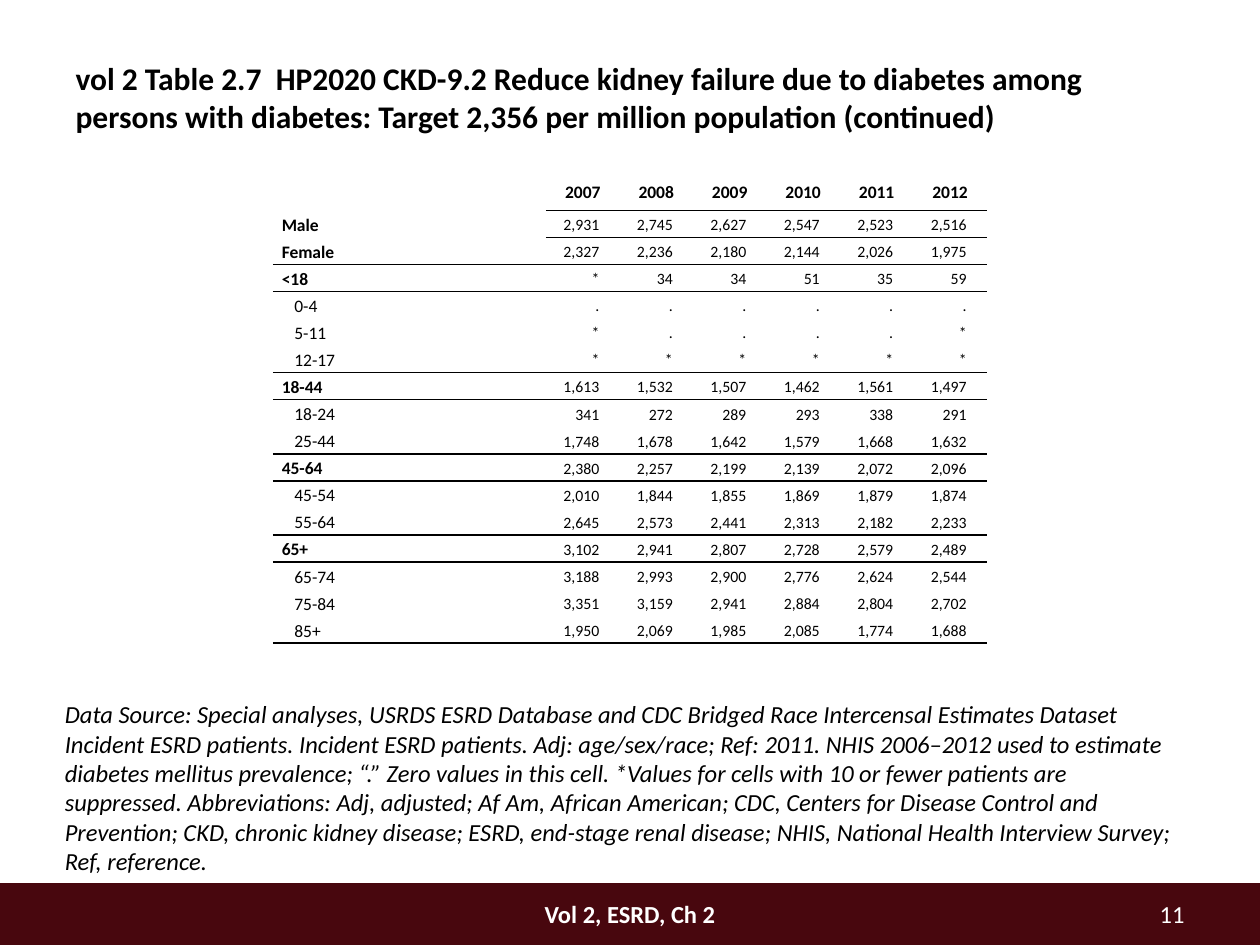
from lxml.etree import SubElement
from pptx import Presentation
from pptx.dml.color import RGBColor
from pptx.enum.shapes import MSO_SHAPE
from pptx.enum.text import MSO_ANCHOR, MSO_AUTO_SIZE, PP_ALIGN
from pptx.oxml.ns import qn
from pptx.util import Inches, Pt

COLS, ROWS = 120, 90
UNIT = Inches(10) / COLS
BLACK = RGBColor(0x00, 0x00, 0x00)
WHITE = RGBColor(0xFF, 0xFF, 0xFF)
MAROON = RGBColor(0x48, 0x07, 0x0E)
FONT = "Calibri"
PLAIN_STYLE = "{2D5ABB26-0587-4C30-8999-92F81FD0307C}"

TITLE = (
    "vol 2 Table 2.7  HP2020 CKD-9.2 Reduce kidney failure due to diabetes among "
    "persons with diabetes: Target 2,356 per million population (continued)"
)
SOURCE = (
    "Data Source: Special analyses, USRDS ESRD Database and CDC Bridged Race "
    "Intercensal Estimates Dataset Incident ESRD patients. Incident ESRD patients. "
    "Adj: age/sex/race; Ref: 2011. NHIS 2006–2012 used to estimate diabetes mellitus "
    "prevalence; “.” Zero values in this cell. *Values for cells with 10 or fewer "
    "patients are suppressed. Abbreviations: Adj, adjusted; Af Am, African American; "
    "CDC, Centers for Disease Control and Prevention; CKD, chronic kidney disease; "
    "ESRD, end-stage renal disease; NHIS, National Health Interview Survey; "
    "Ref, reference."
)
YEARS = ["2007", "2008", "2009", "2010", "2011", "2012"]
GROUPS = [
    ["Male 2,931 2,745 2,627 2,547 2,523 2,516",
     "Female 2,327 2,236 2,180 2,144 2,026 1,975"],
    ["<18 * 34 34 51 35 59",
     "0-4 . . . . . .",
     "5-11 * . . . . *",
     "12-17 * * * * * *"],
    ["18-44 1,613 1,532 1,507 1,462 1,561 1,497",
     "18-24 341 272 289 293 338 291",
     "25-44 1,748 1,678 1,642 1,579 1,668 1,632"],
    ["45-64 2,380 2,257 2,199 2,139 2,072 2,096",
     "45-54 2,010 1,844 1,855 1,869 1,879 1,874",
     "55-64 2,645 2,573 2,441 2,313 2,182 2,233"],
    ["65+ 3,102 2,941 2,807 2,728 2,579 2,489",
     "65-74 3,188 2,993 2,900 2,776 2,624 2,544",
     "75-84 3,351 3,159 2,941 2,884 2,804 2,702",
     "85+ 1,950 2,069 1,985 2,085 1,774 1,688"],
]
UNINDENTED = {"Male", "Female"} | {group[0].split()[0] for group in GROUPS}


def grid(*lengths):
    return [round(n * UNIT) for n in lengths]


def write(tf, text, size, color=BLACK, align=PP_ALIGN.LEFT, **font):
    p = tf.paragraphs[0]
    p.alignment = align
    p.space_before = Pt(0)
    r = p.add_run()
    r.text = text
    r.font.color.rgb = color
    for name, value in {"name": FONT, "size": Pt(size), **font}.items():
        setattr(r.font, name, value)
    return p


def set_frame(tf):
    frame = {"word_wrap": True, "auto_size": MSO_AUTO_SIZE.NONE,
             "vertical_anchor": MSO_ANCHOR.TOP}
    for name, value in frame.items():
        setattr(tf, name, value)


def add_title(s, box):
    sp = s.shapes.title
    for name, value in zip(("left", "top", "width", "height"), grid(*box)):
        setattr(sp, name, value)
    set_frame(sp.text_frame)
    write(sp.text_frame, TITLE, 18, bold=True)


def add_text(s, box, text, size, **style):
    tf = s.shapes.add_textbox(*grid(*box)).text_frame
    set_frame(tf)
    write(tf, text, size, **style)


def add_footer(s, box):
    left, top, width, height = box
    sp = s.shapes.add_shape(MSO_SHAPE.RECTANGLE, *grid(*box))
    sp.shadow.inherit = False
    sp.fill.solid()
    sp.fill.fore_color.rgb = MAROON
    sp.line.fill.background()
    text_top, text_height = top + 0.9, 3.6
    add_text(s, (left + width - 18, text_top, 12, text_height), "11", 14,
             color=WHITE, align=PP_ALIGN.RIGHT)
    add_text(s, (left + width / 2 - 13, text_top, 26, text_height),
             "Vol 2, ESRD, Ch 2", 14, color=WHITE, align=PP_ALIGN.CENTER, bold=True)


def add_border(cell, side):
    ln = SubElement(cell._tc.get_or_add_tcPr(), qn(f"a:ln{side}"), w=str(Pt(1)))
    fill = SubElement(ln, qn("a:solidFill"))
    SubElement(fill, qn("a:srgbClr"), val=str(BLACK))


def fill_cell(cell, text, row, col):
    insets = (0, 0.16) if row and col else (0.07, 0.07)
    margins = {"margin_left": Inches(insets[0]), "margin_right": Inches(insets[1]),
               "margin_top": 0, "margin_bottom": 0,
               "vertical_anchor": MSO_ANCHOR.MIDDLE}
    for name, value in margins.items():
        setattr(cell, name, value)
    if not text:
        return
    if row == 0:
        p = write(cell.text_frame, text, 10, align=PP_ALIGN.CENTER, bold=True)
    elif col:
        p = write(cell.text_frame, text, 9, align=PP_ALIGN.RIGHT)
    else:
        main = text in UNINDENTED
        p = write(cell.text_frame, text, 10, bold=main)
        if not main:
            p._p.get_or_add_pPr().set("indent", str(Inches(0.1)))
    p.line_spacing = 1.15


def add_rates_table(s, box, label_width, header_height):
    left, top, width, height = box
    rows = [["", *YEARS]] + [line.split() for group in GROUPS for line in group]
    ruled, last = {0}, 0
    for group in GROUPS:
        last += len(group)
        ruled.add(last)
    table = s.shapes.add_table(len(rows), len(rows[0]), *grid(*box)).table
    table.first_row = table.horz_banding = False
    table._tbl.tblPr.find(qn("a:tableStyleId")).text = PLAIN_STYLE
    year_width = (width - label_width) / len(YEARS)
    row_height = (height - header_height) / (len(rows) - 1)
    for i, column in enumerate(table.columns):
        column.width, = grid(year_width if i else label_width)
    for i, values in enumerate(rows):
        table.rows[i].height, = grid(row_height if i else header_height)
        for j, text in enumerate(values):
            cell = table.cell(i, j)
            fill_cell(cell, text, i, j)
            for side, rule in (("T", i - 1), ("B", i)):
                if rule in ruled and (rule or j):
                    add_border(cell, side)
            cell.fill.background()


def main():
    prs = Presentation()
    prs.slide_width, prs.slide_height = grid(COLS, ROWS)
    s = prs.slides.add_slide(prs.slide_layouts[5])
    add_footer(s, (0, 84.1, COLS, 5.9))
    add_title(s, (6, 5, 104, 13))
    add_text(s, (5, 66, 109, 16), SOURCE, 14, italic=True)
    add_rates_table(s, (26, 16.3, 68, 45), 26, 3.75)
    prs.save("out.pptx")


if __name__ == "__main__":
    main()
